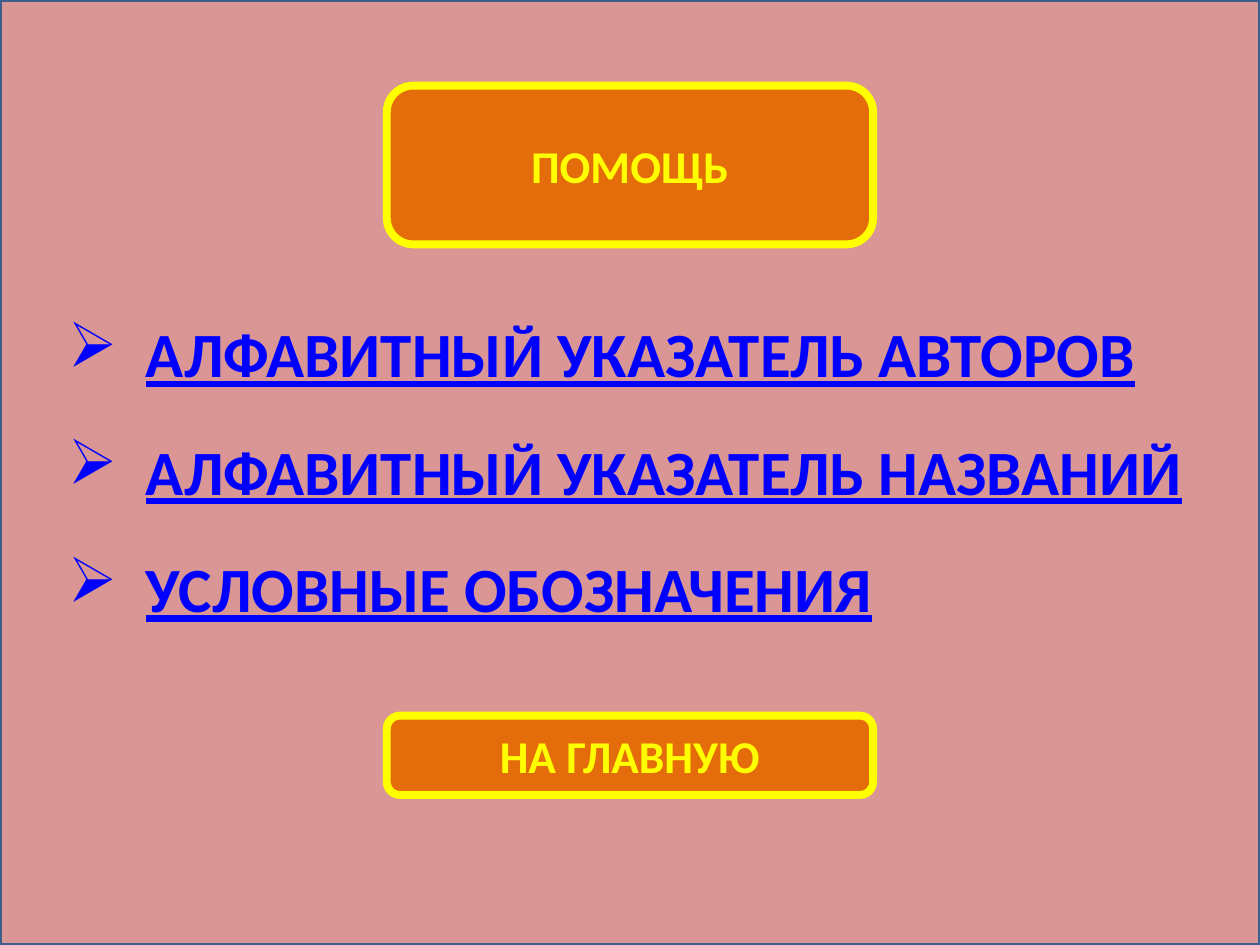
import pptx
import pptx.util
import lxml.etree
from pptx.dml.color import RGBColor
from pptx.enum.shapes import MSO_SHAPE
from pptx.enum.text import MSO_ANCHOR, PP_ALIGN
from pptx.oxml.ns import qn
from pptx.util import Inches

ROSE = RGBColor(0xD9, 0x96, 0x94)
NAVY = RGBColor(0x3A, 0x5F, 0x8C)
ORANGE = RGBColor(0xE4, 0x6C, 0x0A)
YELLOW = RGBColor(0xFF, 0xFF, 0x00)
BLUE = RGBColor(0x00, 0x00, 0xFF)

SLIDE_WIDTH, SLIDE_HEIGHT = 10, 7.5
BUTTON_WIDTH = 3.86
BUTTONS = [("ПОМОЩЬ", 0.68, 1.26), ("НА ГЛАВНУЮ", 5.68, 0.63)]
ENTRIES = [
    ("АЛФАВИТНЫЙ УКАЗАТЕЛЬ АВТОРОВ", 9.43),
    ("АЛФАВИТНЫЙ УКАЗАТЕЛЬ НАЗВАНИЙ", 9.43),
    ("УСЛОВНЫЕ ОБОЗНАЧЕНИЯ", 8.5),
]
ENTRY_LEFT, ENTRY_TOP, ENTRY_HEIGHT, ENTRY_STEP = 0.44, 2.45, 0.74, 0.93
ENTRY_INDENT = 0.62


def add_panel(slide, kind, box, fill, line, line_width):
    shape = slide.shapes.add_shape(kind, *map(Inches, box))
    shape.shadow.inherit = False
    shape.fill.solid()
    shape.fill.fore_color.rgb = fill
    shape.line.color.rgb = line
    shape.line.width = pptx.util.Pt(line_width)
    return shape


def add_run(paragraph, text, size, color, underline=False):
    run = paragraph.add_run()
    run.text = text
    run.font.name = "Calibri"
    run.font.size = pptx.util.Pt(size)
    run.font.bold = True
    run.font.underline = underline
    run.font.color.rgb = color


def add_bullet(paragraph, indent):
    properties = paragraph._p.get_or_add_pPr()
    properties.set("marL", str(Inches(indent)))
    properties.set("indent", str(Inches(-indent)))
    bullet = lxml.etree.SubElement(properties, qn("a:buChar"))
    bullet.set("char", "➢")


def add_button(slide, text, top, height):
    left = (SLIDE_WIDTH - BUTTON_WIDTH) / 2
    button = add_panel(slide, MSO_SHAPE.ROUNDED_RECTANGLE,
                       (left, top, BUTTON_WIDTH, height), ORANGE, YELLOW, 4.5)
    button.text_frame.vertical_anchor = MSO_ANCHOR.MIDDLE
    paragraph = button.text_frame.paragraphs[0]
    paragraph.alignment = PP_ALIGN.CENTER
    add_run(paragraph, text, 26, YELLOW)


def add_entry(slide, text, top, width):
    box = slide.shapes.add_textbox(*map(Inches, (ENTRY_LEFT, top, width, ENTRY_HEIGHT)))
    box.text_frame.word_wrap = True
    paragraph = box.text_frame.paragraphs[0]
    add_bullet(paragraph, ENTRY_INDENT)
    add_run(paragraph, text, 36, BLUE, underline=True)


def main():
    presentation = pptx.Presentation()
    presentation.slide_width = Inches(SLIDE_WIDTH)
    presentation.slide_height = Inches(SLIDE_HEIGHT)
    slide = presentation.slides.add_slide(presentation.slide_layouts[6])
    add_panel(slide, MSO_SHAPE.RECTANGLE, (0, 0, SLIDE_WIDTH, SLIDE_HEIGHT), ROSE, NAVY, 2)
    for text, top, height in BUTTONS:
        add_button(slide, text, top, height)
    for index, (text, width) in enumerate(ENTRIES):
        add_entry(slide, text, ENTRY_TOP + index * ENTRY_STEP, width)
    presentation.save("out.pptx")


if __name__ == "__main__":
    main()
